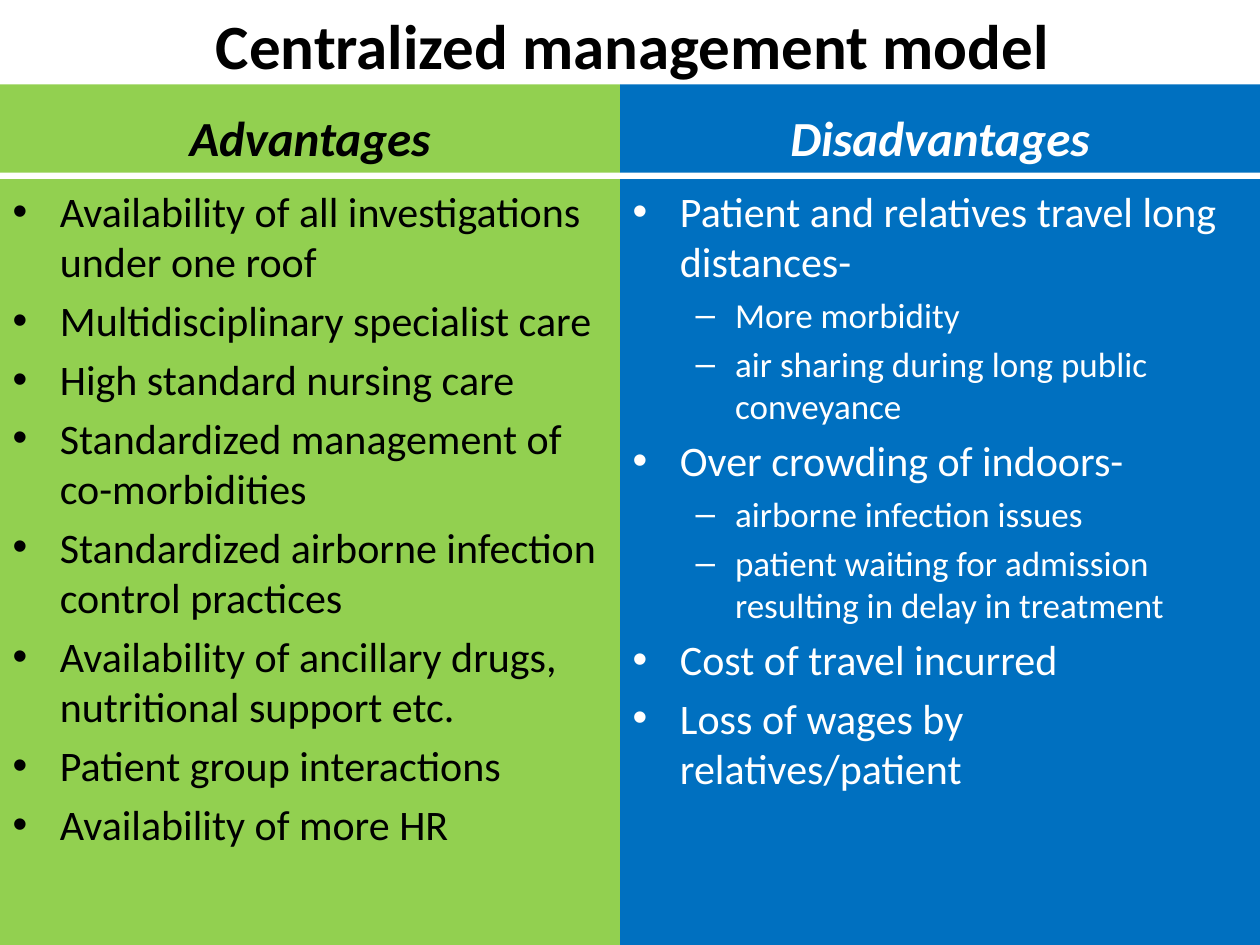
from pptx import Presentation
from pptx.dml.color import RGBColor
from pptx.enum.text import MSO_ANCHOR as Anchor, MSO_AUTO_SIZE as AutoSize, PP_ALIGN as Align
from pptx.util import Cm, Pt

COLOURS = {"green": "92D050", "blue": "0070C0", "black": "000000", "white": "FFFFFF"}
FONT = "Calibri"
SLIDE_WIDTH, SLIDE_HEIGHT = 25.4, 19.05
COLUMN_TOP, HEADING_HEIGHT, GAP = 1.7, 1.78, 0.13
SPLIT = 12.5
LEVEL_SIZES = (24, 20)

# Each list item is (level, text).
ADVANTAGES = [
    (0, "Availability of all investigations under one roof"),
    (0, "Multidisciplinary specialist care"),
    (0, "High standard nursing care"),
    (0, "Standardized management of co-morbidities"),
    (0, "Standardized airborne infection control practices"),
    (0, "Availability of ancillary drugs, nutritional support etc."),
    (0, "Patient group interactions"),
    (0, "Availability of more HR"),
]
DISADVANTAGES = [
    (0, "Patient and relatives travel long distances-"),
    (1, "More morbidity"),
    (1, "air sharing during long public conveyance"),
    (0, "Over crowding of indoors-"),
    (1, "airborne infection issues"),
    (1, "patient waiting for admission resulting in delay in treatment"),
    (0, "Cost of travel incurred"),
    (0, "Loss of wages by relatives/patient"),
]


def place(shape, left, top, width, height, anchor, fill=None):
    """Move a placeholder, fix its text area and fill it if a colour is named."""
    shape.left, shape.top = Cm(left), Cm(top)
    shape.width, shape.height = Cm(width), Cm(height)
    frame = shape.text_frame
    frame.word_wrap = True
    frame.auto_size = AutoSize.NONE
    frame.vertical_anchor = anchor
    if fill:
        shape.fill.solid()
        shape.fill.fore_color.rgb = RGBColor.from_string(COLOURS[fill])
    return frame


def write(paragraph, text, size, colour, bold=False, italic=False):
    paragraph.text = text
    font = paragraph.font
    font.name, font.size = FONT, Pt(size)
    font.bold, font.italic = bold, italic
    font.color.rgb = RGBColor.from_string(COLOURS[colour])


def add_title(shape, left, top, width, height, text):
    paragraph = place(shape, left, top, width, height, Anchor.TOP).paragraphs[0]
    write(paragraph, text, 36, "black", bold=True)
    paragraph.alignment = Align.CENTER


def add_column(heading, body, left, top, width, height, title, items, fill, colour):
    """Fill one side of the comparison: a heading bar above a bulleted list."""
    frame = place(heading, left, top, width, HEADING_HEIGHT, Anchor.BOTTOM, fill)
    write(frame.paragraphs[0], title, 28, colour, bold=True, italic=True)
    frame.paragraphs[0].alignment = Align.CENTER

    offset = HEADING_HEIGHT + GAP
    frame = place(body, left, top + offset, width, height - offset, Anchor.TOP, fill)
    for index, (level, text) in enumerate(items):
        paragraph = frame.add_paragraph() if index else frame.paragraphs[0]
        paragraph.level = level
        write(paragraph, text, LEVEL_SIZES[level], colour)


def main():
    presentation = Presentation()
    presentation.slide_width, presentation.slide_height = Cm(SLIDE_WIDTH), Cm(SLIDE_HEIGHT)
    comparison_layout = presentation.slide_layouts.get_by_name("Comparison")
    slide = presentation.slides.add_slide(comparison_layout)
    title, left_heading, left_body, right_heading, right_body = slide.placeholders

    add_title(title, 0.05, 0, SLIDE_WIDTH, 1.8, "Centralized management model")
    column_height = SLIDE_HEIGHT - COLUMN_TOP
    add_column(left_heading, left_body, 0, COLUMN_TOP, SPLIT, column_height,
               "Advantages", ADVANTAGES, "green", "black")
    add_column(right_heading, right_body, SPLIT, COLUMN_TOP, SLIDE_WIDTH - SPLIT, column_height,
               "Disadvantages", DISADVANTAGES, "blue", "white")
    for footer in list(slide.placeholders)[5:]:
        footer.element.getparent().remove(footer.element)
    presentation.save("out.pptx")


if __name__ == "__main__":
    main()
